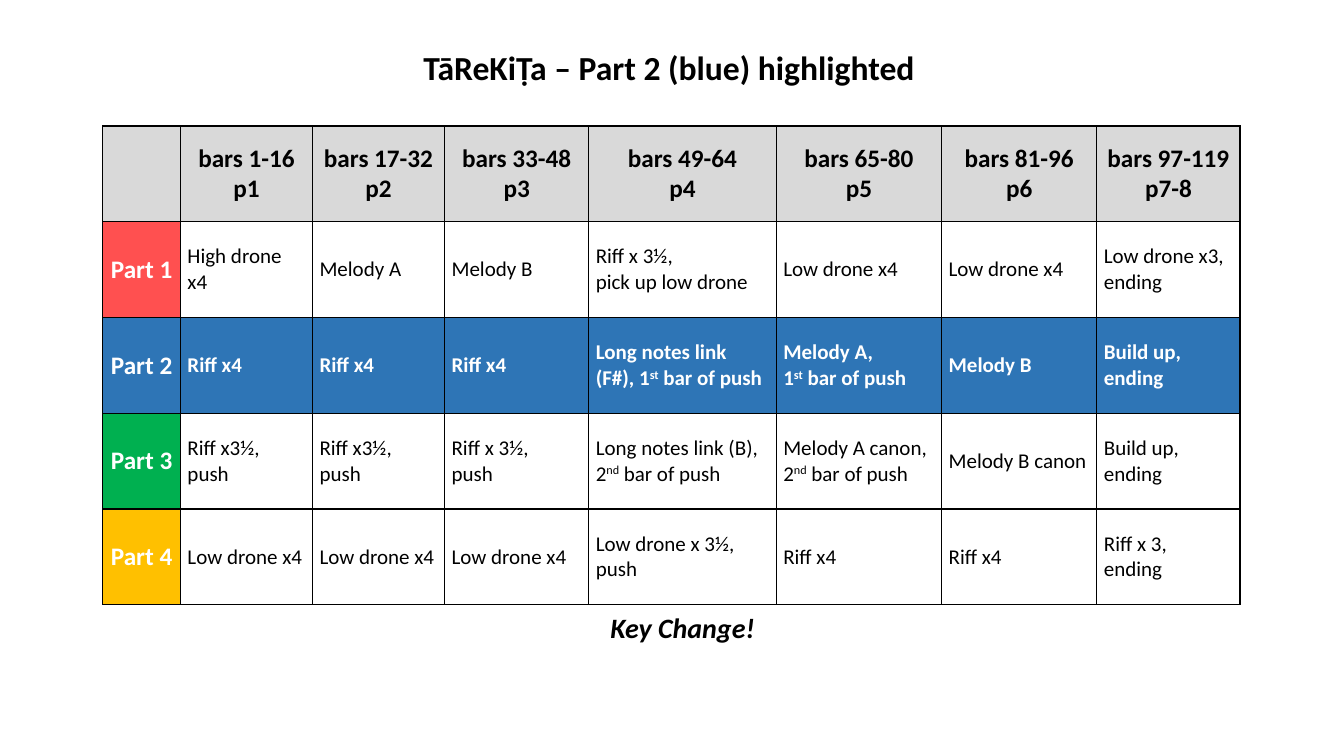
from dataclasses import dataclass

from lxml.etree import SubElement
from pptx import Presentation
from pptx.dml.color import RGBColor
from pptx.enum.text import MSO_ANCHOR, MSO_AUTO_SIZE, PP_ALIGN
from pptx.oxml.ns import qn
from pptx.util import Emu, Pt

FONT = "Calibri"
BLACK = RGBColor(0x00, 0x00, 0x00)
WHITE = RGBColor(0xFF, 0xFF, 0xFF)
GREY = RGBColor(0xD9, 0xD9, 0xD9)
RED = RGBColor(0xFF, 0x50, 0x50)
BLUE = RGBColor(0x2E, 0x75, 0xB6)
GREEN = RGBColor(0x00, 0xB0, 0x50)
YELLOW = RGBColor(0xFF, 0xC0, 0x00)

EMU_PER_PX = 9144
COLUMN_WIDTHS = [77, 131, 131, 143, 186, 164, 154, 142]
ROW_HEIGHTS = [95, 95, 95, 95, 95, 48]
CELL_INSET = 7
KEY_CHANGE_COLUMN = 4

SECTIONS = [
    "bars 1-16\np1", "bars 17-32\np2", "bars 33-48\np3", "bars 49-64\np4",
    "bars 65-80\np5", "bars 81-96\np6", "bars 97-119\np7-8",
]


@dataclass(frozen=True)
class Part:
    name: str
    color: RGBColor
    music: list[str]
    highlighted: bool = False


PARTS = [
    Part("Part 1", RED, [
        "High drone x4", "Melody A", "Melody B", "Riff x 3½,\npick up low drone",
        "Low drone x4", "Low drone x4", "Low drone x3, ending",
    ]),
    Part("Part 2", BLUE, [
        "Riff x4", "Riff x4", "Riff x4", "Long notes link (F#), 1^st^ bar of push",
        "Melody A,\n1^st^ bar of push", "Melody B", "Build up, ending",
    ], highlighted=True),
    Part("Part 3", GREEN, [
        "Riff x3½, push", "Riff x3½, push", "Riff x 3½,\npush",
        "Long notes link (B), 2^nd^ bar of push",
        "Melody A canon, 2^nd^ bar of push", "Melody B canon", "Build up, ending",
    ]),
    Part("Part 4", YELLOW, [
        "Low drone x4", "Low drone x4", "Low drone x4", "Low drone x 3½, push",
        "Riff x4", "Riff x4", "Riff x 3,\nending",
    ]),
]


def px(length: int) -> Emu:
    return Emu(length * EMU_PER_PX)


def write(frame, text: str, *, size: int, color: RGBColor = BLACK, bold: bool = False,
          italic: bool = False, align: PP_ALIGN = PP_ALIGN.LEFT) -> None:
    for index, line in enumerate(text.split("\n")):
        paragraph = frame.add_paragraph() if index else frame.paragraphs[0]
        paragraph.alignment = align
        for position, piece in enumerate(line.split("^")):
            run = paragraph.add_run()
            run.text = piece
            run.font.name = FONT
            run.font.size = Pt(size)
            run.font.bold = bold
            run.font.italic = italic
            run.font.color.rgb = color
            if position % 2:
                run.font._element.set("baseline", "30000")


def style_cell(cell, fill: RGBColor | None = None, edges: str = "LRTB") -> None:
    cell.vertical_anchor = MSO_ANCHOR.MIDDLE
    cell.margin_left = cell.margin_right = px(CELL_INSET)
    cell.margin_top = cell.margin_bottom = 0
    properties = cell._tc.get_or_add_tcPr()
    for edge in "LRTB":
        line = SubElement(properties, qn(f"a:ln{edge}"), w=str(Pt(1)))
        if edge in edges:
            solid = SubElement(line, qn("a:solidFill"))
            SubElement(solid, qn("a:srgbClr"), val=str(BLACK))
        else:
            SubElement(line, qn("a:noFill"))
    if fill is None:
        cell.fill.background()
    else:
        cell.fill.solid()
        cell.fill.fore_color.rgb = fill


def add_title(slide) -> None:
    title = slide.shapes.title
    title.left, title.top, title.width, title.height = px(410), px(42), px(513), px(51)
    frame = title.text_frame
    frame.auto_size = MSO_AUTO_SIZE.NONE
    frame.vertical_anchor = MSO_ANCHOR.TOP
    write(frame, "TāReKiṬa – Part 2 (blue) highlighted", size=24, bold=True)


def add_arrangement(slide) -> None:
    table = slide.shapes.add_table(
        len(ROW_HEIGHTS), len(COLUMN_WIDTHS), px(102), px(125),
        px(sum(COLUMN_WIDTHS)), px(sum(ROW_HEIGHTS)),
    ).table
    table.first_row = table.horz_banding = False
    for column, width in zip(table.columns, COLUMN_WIDTHS):
        column.width = px(width)
    for row, height in zip(table.rows, ROW_HEIGHTS):
        row.height = px(height)

    for column, section in enumerate(["", *SECTIONS]):
        heading = table.cell(0, column)
        style_cell(heading, GREY)
        if section:
            write(heading.text_frame, section, size=18, bold=True, align=PP_ALIGN.CENTER)

    for row, part in enumerate(PARTS, start=1):
        label = table.cell(row, 0)
        style_cell(label, part.color)
        write(label.text_frame, part.name, size=18, color=WHITE, bold=True,
              align=PP_ALIGN.CENTER)
        for column, music in enumerate(part.music, start=1):
            passage = table.cell(row, column)
            style_cell(passage, part.color if part.highlighted else None)
            write(passage.text_frame, music, size=15, bold=part.highlighted,
                  color=WHITE if part.highlighted else BLACK)

    footer_row = len(ROW_HEIGHTS) - 1
    for column in range(len(COLUMN_WIDTHS)):
        style_cell(table.cell(footer_row, column), edges="T")
    write(table.cell(footer_row, KEY_CHANGE_COLUMN).text_frame, "Key Change!",
          size=20, bold=True, italic=True, align=PP_ALIGN.CENTER)


def main() -> None:
    presentation = Presentation()
    presentation.slide_width, presentation.slide_height = px(1333), px(750)
    slide = presentation.slides.add_slide(presentation.slide_layouts[5])
    add_title(slide)
    add_arrangement(slide)
    presentation.save("out.pptx")


if __name__ == "__main__":
    main()
